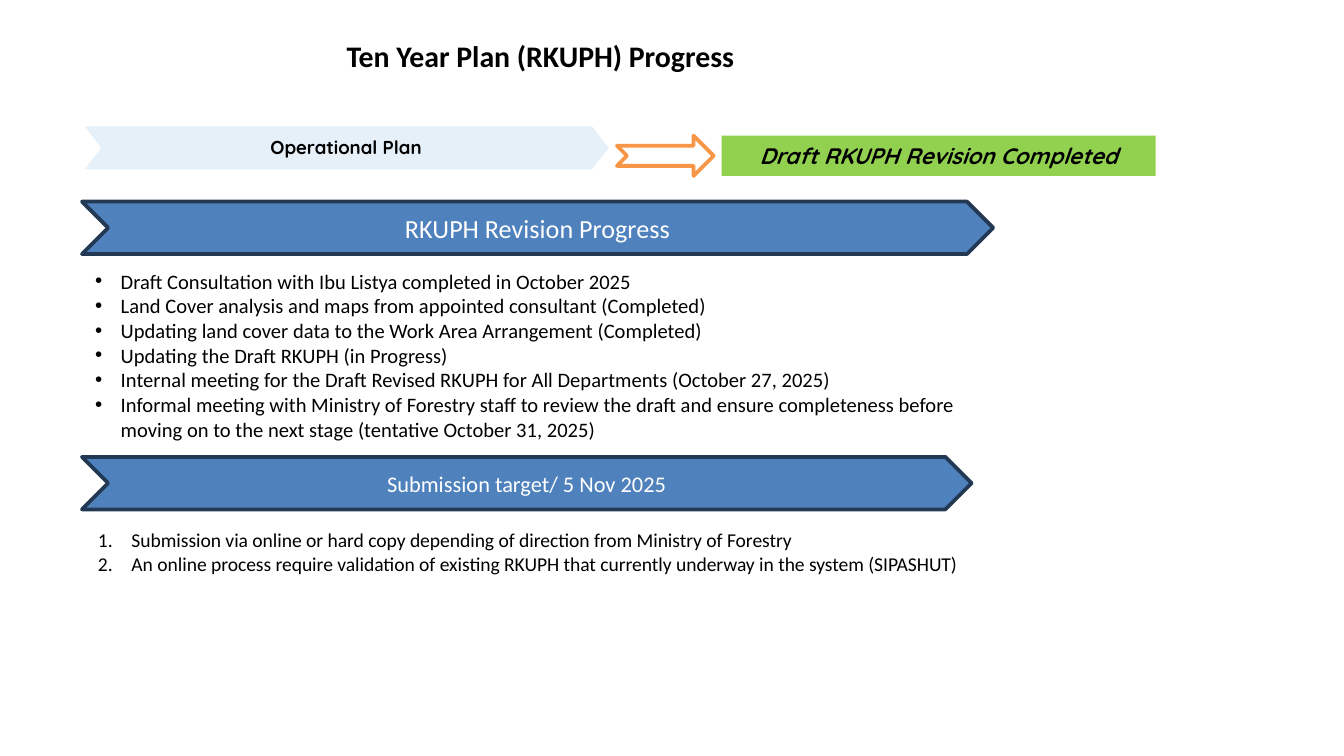
import dataclasses

import lxml.etree
import pptx
import pptx.dml.color
import pptx.enum.shapes
import pptx.enum.text
import pptx.oxml.ns
import pptx.util

Inches = pptx.util.Inches
SHAPE = pptx.enum.shapes.MSO_SHAPE
ANCHOR = pptx.enum.text.MSO_ANCHOR
ALIGN = pptx.enum.text.PP_ALIGN


@dataclasses.dataclass(frozen=True)
class Theme:
    black: str = "000000"
    white: str = "FFFFFF"
    blue: str = "4F81BD"
    navy: str = "233953"
    pale: str = "DEEBF7"
    green: str = "92D050"
    orange: str = "F79646"
    body: str = "Calibri"
    label: str = "Quicksand"
    title: float = 16
    head: float = 14
    sub: float = 12
    text: float = 11
    step: float = 10.5
    small: float = 10


THEME = Theme()

TASKS = [
    "Draft Consultation with Ibu Listya completed in October 2025",
    "Land Cover analysis and maps from appointed consultant (Completed)",
    "Updating land cover data to the Work Area Arrangement (Completed)",
    "Updating the Draft RKUPH (in Progress)",
    "Internal meeting for the Draft Revised RKUPH for All Departments (October 27, 2025)",
    "Informal meeting with Ministry of Forestry staff to review the draft and ensure "
    "completeness before moving on to the next stage (tentative October 31, 2025)",
]
STEPS = [
    "Submission via online or hard copy depending of direction from Ministry of Forestry",
    "An online process require validation of existing RKUPH that currently underway "
    "in the system (SIPASHUT)",
]


def color(code):
    return pptx.dml.color.RGBColor.from_string(code)


def add_tag(parent, tag, **attrs):
    node = lxml.etree.SubElement(parent, pptx.oxml.ns.qn(tag))
    for key, value in attrs.items():
        node.set(key, value)


def style(par, size, tint=THEME.black, **form):
    """Format a paragraph; form holds further font attributes."""
    form = {"name": THEME.body, "size": pptx.util.Pt(size), **form}
    for run in par.runs:
        for key, value in form.items():
            setattr(run.font, key, value)
        run.font.color.rgb = color(tint)


def write(shape, text, size, align=ALIGN.CENTER, anchor=ANCHOR.TOP, **form):
    frame = shape.text_frame
    frame.word_wrap = True
    frame.vertical_anchor = anchor
    par = frame.paragraphs[0]
    par.text = text
    par.alignment = align
    style(par, size, **form)


def add_form(shapes, kind, box, fill, line=None):
    shape = shapes.add_shape(kind, *map(Inches, box))
    shape.shadow.inherit = False
    shape.fill.solid()
    shape.fill.fore_color.rgb = color(fill)
    if line:
        shape.line.color.rgb = color(line)
        shape.line.width = pptx.util.Pt(2)
    else:
        shape.line.fill.background()
    return shape


def add_title(shapes, box, text):
    write(shapes.add_textbox(*map(Inches, box)), text, THEME.title,
          align=ALIGN.LEFT, bold=True)


def add_plan(shapes, box):
    """Translucent chevron grouped with its label."""
    left, top, width, height = box
    group = shapes.add_group_shape().shapes
    shape = add_form(group, SHAPE.CHEVRON, box, THEME.pale)
    shape.adjustments[0] = 0.39
    tint = shape.fill._xPr.find(".//" + pptx.oxml.ns.qn("a:srgbClr"))
    add_tag(tint, "a:alpha", val="75000")
    inner = (left + 0.28, top + 0.02, width - 0.57, height - 0.05)
    label = group.add_textbox(*map(Inches, inner))
    write(label, "Operational Plan", THEME.small, name=THEME.label, bold=True)


def add_status(shapes, box):
    """Row from the plan through an arrow to its result."""
    left, top, width, height = box
    add_plan(shapes, (left, top, 3.9, 0.32))
    low, tall = top + 0.07, height - 0.07
    add_form(shapes, SHAPE.NOTCHED_RIGHT_ARROW, (left + 3.96, low, 0.72, tall),
             THEME.white, THEME.orange)
    done = add_form(shapes, SHAPE.RECTANGLE, (left + 4.74, low, width - 4.74, tall),
                    THEME.green)
    write(done, "Draft RKUPH Revision Completed", THEME.sub,
          name=THEME.label, bold=True, italic=True)


def add_banner(shapes, box, text, size):
    shape = add_form(shapes, SHAPE.CHEVRON, box, THEME.blue, THEME.navy)
    write(shape, text, size, anchor=ANCHOR.MIDDLE, tint=THEME.white)


def add_list(shapes, box, items, size, indent, ordered=False):
    frame = shapes.add_textbox(*map(Inches, box)).text_frame
    frame.word_wrap = True
    for index, item in enumerate(items):
        par = frame.paragraphs[0] if index == 0 else frame.add_paragraph()
        par.text = item
        props = par._p.get_or_add_pPr()
        props.set("marL", str(Inches(indent)))
        props.set("indent", str(-Inches(indent)))
        if ordered:
            add_tag(props, "a:buFont", typeface="+mj-lt")
            add_tag(props, "a:buAutoNum", type="arabicPeriod")
        else:
            add_tag(props, "a:buFont", typeface="Arial")
            add_tag(props, "a:buChar", char="•")
        style(par, size)


def main():
    deck = pptx.Presentation()
    deck.slide_width = Inches(10)
    deck.slide_height = deck.slide_width * 9 // 16
    shapes = deck.slides.add_slide(deck.slide_layouts[6]).shapes
    add_title(shapes, (2.48, 0.23, 3.62, 0.37), "Ten Year Plan (RKUPH) Progress")
    add_status(shapes, (0.63, 0.94, 7.97, 0.37))
    add_banner(shapes, (0.61, 1.5, 6.78, 0.39), "RKUPH Revision Progress", THEME.head)
    add_list(shapes, (0.61, 1.95, 6.73, 1.4), TASKS, THEME.text, 0.19)
    add_banner(shapes, (0.61, 3.4, 6.62, 0.39), "Submission target/ 5 Nov 2025", THEME.sub)
    add_list(shapes, (0.63, 3.88, 6.69, 0.63), STEPS, THEME.step, 0.25, ordered=True)
    deck.save("out.pptx")


if __name__ == "__main__":
    main()
